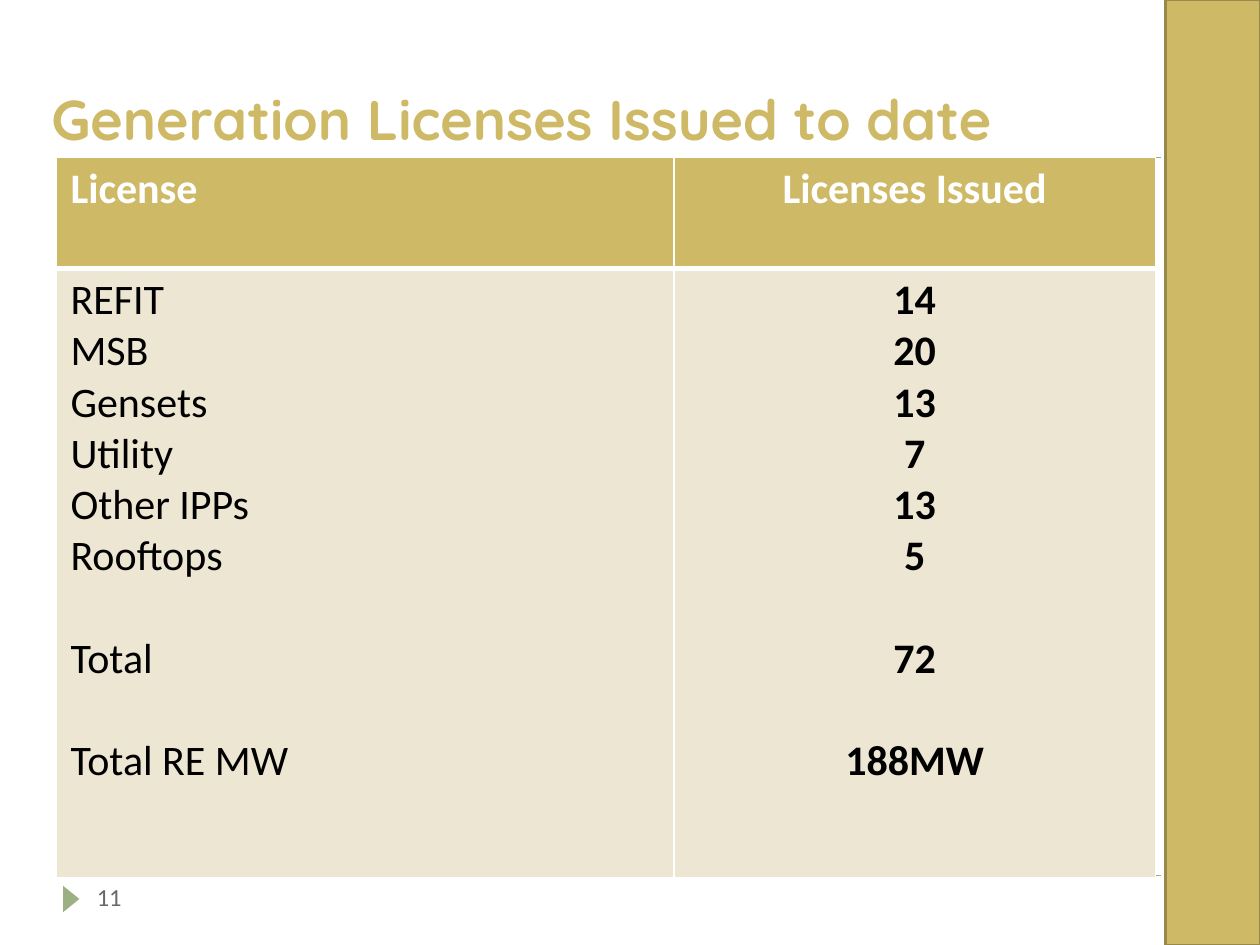
from dataclasses import dataclass

from lxml import etree
from pptx import Presentation
from pptx.dml.color import RGBColor
from pptx.enum.dml import MSO_LINE
from pptx.enum.shapes import MSO_CONNECTOR, MSO_SHAPE
from pptx.enum.text import MSO_ANCHOR, PP_ALIGN
from pptx.oxml.ns import qn
from pptx.util import Pt

PX = 9144  # 100 px to the inch
DASH = MSO_LINE.DASH
STRAIGHT = MSO_CONNECTOR.STRAIGHT
RECT, TRIANGLE = MSO_SHAPE.RECTANGLE, MSO_SHAPE.ISOSCELES_TRIANGLE
TOP, BOTTOM = MSO_ANCHOR.TOP, MSO_ANCHOR.BOTTOM
LEFT, CENTER = PP_ALIGN.LEFT, PP_ALIGN.CENTER


@dataclass(frozen=True)
class Theme:
    gold: str = "CEB966"
    edge: str = "98894B"
    green: str = "9CB084"
    cream: str = "EDE6D3"
    gray: str = "69676D"
    white: str = "FFFFFF"
    black: str = "000000"
    head: str = "Quicksand"
    body: str = "Calibri"
    title: int = 32
    cell: int = 24
    note: int = 14
    gap: float = 29.3  # one line of cell text


T = Theme()
HEADS = ["License", "Licenses Issued"]
# label, count, whether a gap comes before
ROWS = [
    ("REFIT", "14", False),
    ("MSB", "20", False),
    ("Gensets", "13", False),
    ("Utility", "7", False),
    ("Other IPPs", "13", False),
    ("Rooftops", "5", False),
    ("Total", "72", True),
    ("Total RE MW", "188MW", True),
]


def px(*vals):
    return [v * PX for v in vals]


def rgb(code):
    return RGBColor.from_string(code)


def style(para, name, size, color, bold=False):
    for run in para.runs:
        font = run.font
        font.name, font.size, font.bold = name, Pt(size), bold
        font.color.rgb = rgb(color)


def add_text(slide, box, text, anchor, *look):
    frame = slide.shapes.add_textbox(*px(*box)).text_frame
    frame.word_wrap = True
    frame.vertical_anchor = anchor
    frame.text = text
    style(frame.paragraphs[0], *look)


def add_rule(slide, y):
    rule = slide.shapes.add_connector(STRAIGHT, *px(50, y, 950, y))
    rule.line.color.rgb = rgb(T.green)
    rule.line.width = Pt(0.75)
    rule.line.dash_style = DASH
    etree.SubElement(rule._element.spPr, qn("a:effectLst"))


def add_block(slide, kind, box, fill, edge=None):
    block = slide.shapes.add_shape(kind, *px(*box))
    block.shadow.inherit = False
    block.fill.solid()
    block.fill.fore_color.rgb = rgb(fill)
    if edge:
        block.line.color.rgb = rgb(edge)
        block.line.width = Pt(1.5)
    else:
        block.line.fill.background()
    return block


def add_edges(cell, top, bottom):
    """Draw white cell borders; widths in points, sides at one point."""
    props = cell._tc.get_or_add_tcPr()
    for side, width in (("L", 1), ("R", 1), ("T", top), ("B", bottom)):
        line = etree.SubElement(props, qn("a:ln" + side), w=str(Pt(width)))
        fill = etree.SubElement(line, qn("a:solidFill"))
        etree.SubElement(fill, qn("a:srgbClr"), val=T.white)


def fill_cell(cell, lines, gaps, align, fill, color, bold, edges):
    add_edges(cell, *edges)
    cell.fill.solid()
    cell.fill.fore_color.rgb = rgb(fill)
    cell.margin_left = cell.margin_right = 11 * PX
    cell.margin_top = cell.margin_bottom = 5 * PX
    cell.text_frame.text = "\n".join(lines)
    for para, gap in zip(cell.text_frame.paragraphs, gaps):
        para.alignment = align
        if gap:
            para.space_before = Pt(T.gap)
        style(para, T.body, T.cell, color, bold)


def add_grid(slide):
    grid = slide.shapes.add_table(2, 2, *px(45, 125, 872, 572)).table
    for row, high in zip(grid.rows, px(88, 484)):
        row.height = high
    for col, wide in zip(grid.columns, px(490, 382)):
        col.width = wide
    *texts, gaps = zip(*ROWS)
    for i, align in enumerate((LEFT, CENTER)):
        fill_cell(grid.cell(0, i), [HEADS[i]], [False], align,
                  T.gold, T.white, True, (1, 3))
        fill_cell(grid.cell(1, i), texts[i], gaps, align,
                  T.cream, T.black, i == 1, (3, 1))


def main():
    deck = Presentation()
    deck.slide_width, deck.slide_height = px(1000, 750)
    slide = deck.slides.add_slide(deck.slide_layouts[6])
    for y in (695, 125):
        add_rule(slide, y)
    add_block(slide, TRIANGLE, (46, 707, 21, 13), T.green).rotation = 90
    add_block(slide, RECT, (925, 0, 75, 750), T.gold, T.edge)
    add_text(slide, (31, 17, 900, 108), "Generation Licenses Issued to date",
             BOTTOM, T.head, T.title, T.gold, True)
    add_text(slide, (67, 695, 217, 40), "11", TOP, T.body, T.note, T.gray)
    add_grid(slide)
    deck.save("out.pptx")


if __name__ == "__main__":
    main()
